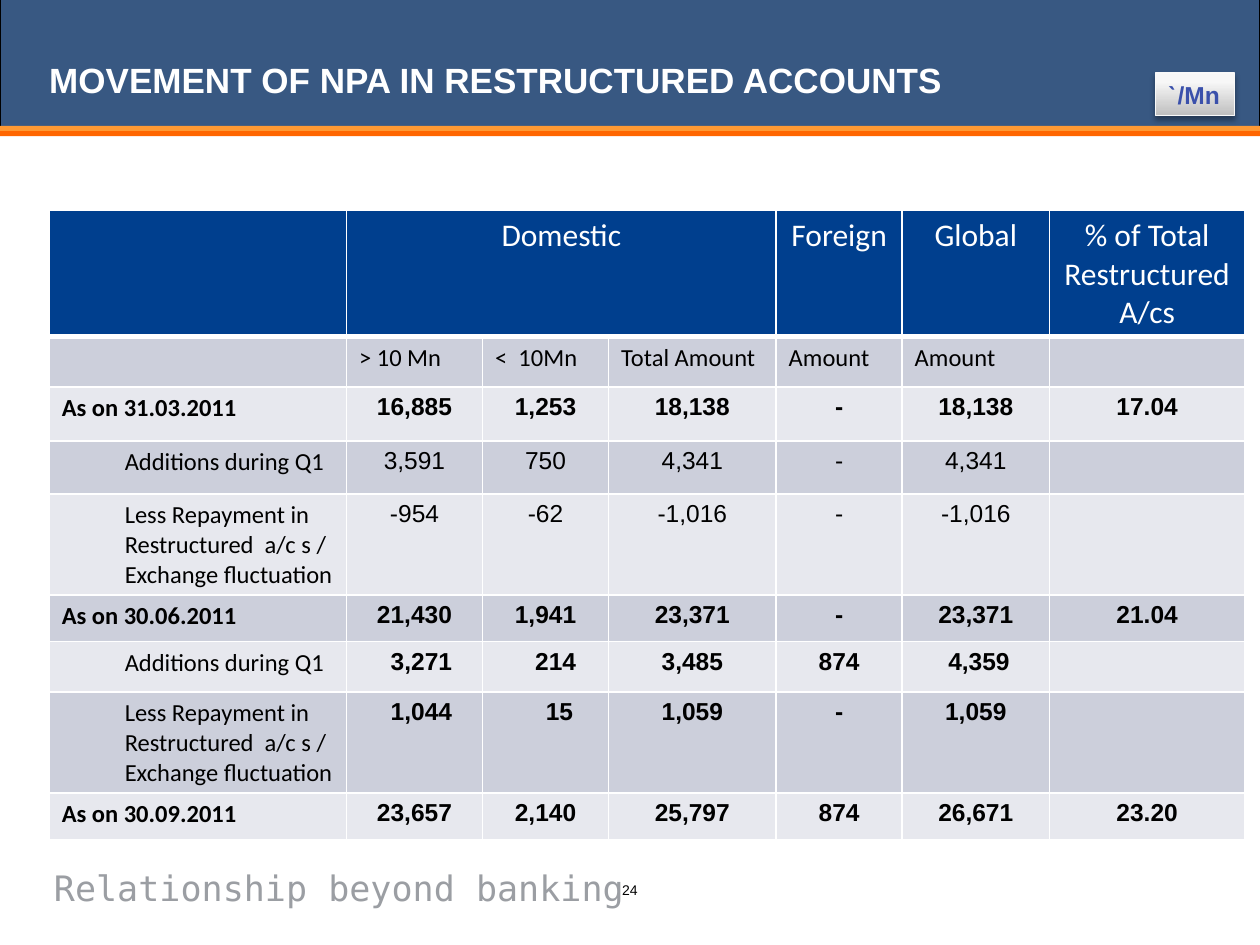
from lxml import etree
from pptx import Presentation
from pptx.dml.color import RGBColor
from pptx.enum.shapes import MSO_SHAPE
from pptx.enum.text import MSO_ANCHOR, PP_ALIGN
from pptx.oxml import parse_xml
from pptx.oxml.ns import nsdecls, qn
from pptx.util import Inches, Pt

RECTANGLE = MSO_SHAPE.RECTANGLE
LEFT, CENTER = PP_ALIGN.LEFT, PP_ALIGN.CENTER
TOP, MIDDLE, BOTTOM = MSO_ANCHOR.TOP, MSO_ANCHOR.MIDDLE, MSO_ANCHOR.BOTTOM

WHITE = RGBColor(0xFF, 0xFF, 0xFF)
BLACK = RGBColor(0x00, 0x00, 0x00)
NAVY = RGBColor(0x00, 0x2A, 0x60)
LIGHT_ORANGE = RGBColor(0xFF, 0x99, 0x33)
ORANGE = RGBColor(0xFF, 0x66, 0x00)
SLOGAN_GRAY = RGBColor(0x9B, 0x9E, 0xA3)
HEAD_BLUE = RGBColor(0x00, 0x3F, 0x8E)
BAND_DARK = RGBColor(0xCC, 0xCF, 0xDB)
BAND_LIGHT = RGBColor(0xE7, 0xE8, 0xEE)
BADGE_DARK = RGBColor(0xBE, 0xBE, 0xBE)
BADGE_LIGHT = RGBColor(0xF7, 0xF7, 0xF7)
BADGE_LINE = RGBColor(0xF9, 0xF9, 0xF9)
BADGE_TEXT = RGBColor(0x3A, 0x50, 0xAB)

COLUMNS = [2.36, 1.08, 1, 1.33, 1, 1.17, 1.55]
ROWS = [0.92, 0.33, 0.43, 0.42, 0.75, 0.37, 0.37, 0.37, 0.37]
HEADINGS = ["", "Domestic", "", "", "Foreign", "Global",
            "% of Total Restructured A/cs"]
UNITS = ["", "> 10 Mn", "<  10Mn", "Total Amount", "Amount", "Amount", ""]
ADDITIONS = "Additions during Q1"
REPAYMENT = "Less Repayment in Restructured  a/c s / Exchange fluctuation"
# Label, figures, whether the figures are bold
MOVEMENTS = [
    ("As on 31.03.2011", ["16,885", "1,253", "18,138", "-", "18,138", "17.04"], True),
    (ADDITIONS, ["3,591", "750", "4,341", "-", "4,341", ""], False),
    (REPAYMENT, ["-954", "-62", "-1,016", "-", "-1,016", ""], False),
    ("As on 30.06.2011", ["21,430", "1,941", "23,371", "-", "23,371", "21.04"], True),
    (ADDITIONS, ["3,271", "214", "3,485", "874", "4,359", ""], True),
    (REPAYMENT, ["1,044", "15", "1,059", "-", "1,059", ""], True),
    ("As on 30.09.2011", ["23,657", "2,140", "25,797", "874", "26,671", "23.20"], True),
]
# Indents that push some centred figures to the right: (row, column)
FIGURE_INDENTS = {(6, 1): 0.11, (6, 2): 0.16, (6, 5): 0.05,
                  (7, 1): 0.11, (7, 2): 0.22}


class SlideBuilder:
    def __init__(self, page):
        self.page = page

    def style(self, para, size, font, color, bold=False, align=LEFT):
        para.alignment = align
        para.font.size = Pt(size)
        para.font.name = font
        para.font.bold = bold
        para.font.color.rgb = color

    def bar(self, left, top, width, height, color, alpha=None, line=None):
        box = self.page.shapes.add_shape(
            RECTANGLE, Inches(left), Inches(top), Inches(width), Inches(height))
        box.shadow.inherit = False
        box.fill.solid()
        box.fill.fore_color.rgb = color
        if alpha:
            tint = box.fill._xPr.find(".//" + qn("a:srgbClr"))
            etree.SubElement(tint, qn("a:alpha"), val=str(alpha * 1000))
        if line is None:
            box.line.fill.background()
        else:
            box.line.color.rgb = line
            box.line.width = Pt(0.75)

    def text(self, left, top, width, height, words, size, font, color,
             bold=False, align=LEFT, anchor=TOP, inset=True, wrap=True):
        box = self.page.shapes.add_textbox(
            Inches(left), Inches(top), Inches(width), Inches(height))
        frame = box.text_frame
        frame.word_wrap = wrap
        frame.vertical_anchor = anchor
        if not inset:
            frame.margin_left = frame.margin_right = 0
            frame.margin_top = frame.margin_bottom = 0
        frame.text = words
        self.style(frame.paragraphs[0], size, font, color, bold, align)

    def badge(self, left, top, width, height, spans):
        box = self.page.shapes.add_shape(
            RECTANGLE, Inches(left), Inches(top), Inches(width), Inches(height))
        box.fill.gradient()
        box.fill.gradient_angle = 90
        stops = zip(box.fill.gradient_stops, (0, 0.8), (BADGE_DARK, BADGE_LIGHT))
        for stop, position, color in stops:
            stop.position = position
            stop.color.rgb = color
        box.line.color.rgb = BADGE_LINE
        box.line.width = Pt(0.75)
        box._element.spPr.append(parse_xml(
            f'<a:effectLst {nsdecls("a")}><a:outerShdw blurRad="39370" '
            'dist="22860" dir="5400000" rotWithShape="0"><a:srgbClr val="000000">'
            '<a:alpha val="35000"/></a:srgbClr></a:outerShdw></a:effectLst>'))
        frame = box.text_frame
        frame.word_wrap = False
        para = frame.paragraphs[0]
        para.alignment = LEFT
        for words, font in spans:
            span = para.add_run()
            span.text = words
            span.font.name = font
            span.font.size = Pt(14)
            span.font.bold = True
            span.font.color.rgb = BADGE_TEXT

    def table(self, left, top, columns, rows):
        table = self.page.shapes.add_table(
            len(rows), len(columns), Inches(left), Inches(top),
            Inches(sum(columns)), Inches(sum(rows))).table
        for column, width in zip(table.columns, columns):
            column.width = Inches(width)
        for row, height in zip(table.rows, rows):
            row.height = Inches(height)
        return table

    def cell(self, cell, fill, words="", size=14, font="Calibri", color=BLACK,
             bold=False, align=LEFT, indent=0, top_line=1, bottom_line=1):
        widths = {"L": 1, "R": 1, "T": top_line, "B": bottom_line}
        for side, width in widths.items():
            cell._tc.get_or_add_tcPr().append(parse_xml(
                f'<a:ln{side} {nsdecls("a")} w="{Pt(width)}"><a:solidFill>'
                f'<a:srgbClr val="{WHITE}"/></a:solidFill></a:ln{side}>'))
        cell.fill.solid()
        cell.fill.fore_color.rgb = fill
        if words:
            cell.text = words
            para = cell.text_frame.paragraphs[0]
            if indent:
                para._p.get_or_add_pPr().set("marL", str(Inches(indent)))
            self.style(para, size, font, color, bold, align)


def main():
    deck = Presentation()
    deck.slide_width, deck.slide_height = Inches(10), Inches(7.5)
    builder = SlideBuilder(deck.slides.add_slide(deck.slide_layouts[6]))

    # Header band, stripes and footer slogan
    builder.bar(0, -0.01, 10, 1.07, NAVY, alpha=78, line=BLACK)
    builder.bar(-0.01, 1, 10.01, 0.04, LIGHT_ORANGE)
    builder.bar(-0.01, 1.04, 10.01, 0.04, ORANGE)
    builder.text(0.33, 6.83, 5.43, 0.43, "Relationship beyond banking", 20,
                 "DejaVu Sans Mono", SLOGAN_GRAY, anchor=MIDDLE)

    # Title, page number and unit badge
    builder.text(0.39, 0.33, 9.25, 0.47, "MOVEMENT OF NPA IN RESTRUCTURED ACCOUNTS",
                 20, "Arial", WHITE, bold=True, anchor=BOTTOM, inset=False)
    builder.text(4.93, 7, 0.14, 0.13, "24", 8, "Arial", BLACK,
                 align=CENTER, inset=False, wrap=False)
    builder.badge(9.17, 0.58, 0.63, 0.34, [("`", "Lato"), ("/Mn", "Arial")])

    # Table headings
    table = builder.table(0.39, 1.67, COLUMNS, ROWS)
    for column, (heading, unit) in enumerate(zip(HEADINGS, UNITS)):
        builder.cell(table.cell(0, column), HEAD_BLUE, heading, size=18,
                     color=WHITE, align=CENTER, bottom_line=3)
        builder.cell(table.cell(1, column), BAND_DARK, unit, top_line=3)
    table.cell(0, 1).merge(table.cell(0, 3))

    # Balances and movements
    for row, (label, figures, bold) in enumerate(MOVEMENTS, start=2):
        fill = BAND_DARK if row % 2 else BAND_LIGHT
        balance = label.startswith("As on")
        builder.cell(table.cell(row, 0), fill, label, bold=balance,
                     indent=0 if balance else 0.5)
        for column, figure in enumerate(figures, start=1):
            builder.cell(table.cell(row, column), fill, figure, font="Arial",
                         bold=bold, align=CENTER,
                         indent=FIGURE_INDENTS.get((row, column), 0))

    deck.save("out.pptx")


if __name__ == "__main__":
    main()
